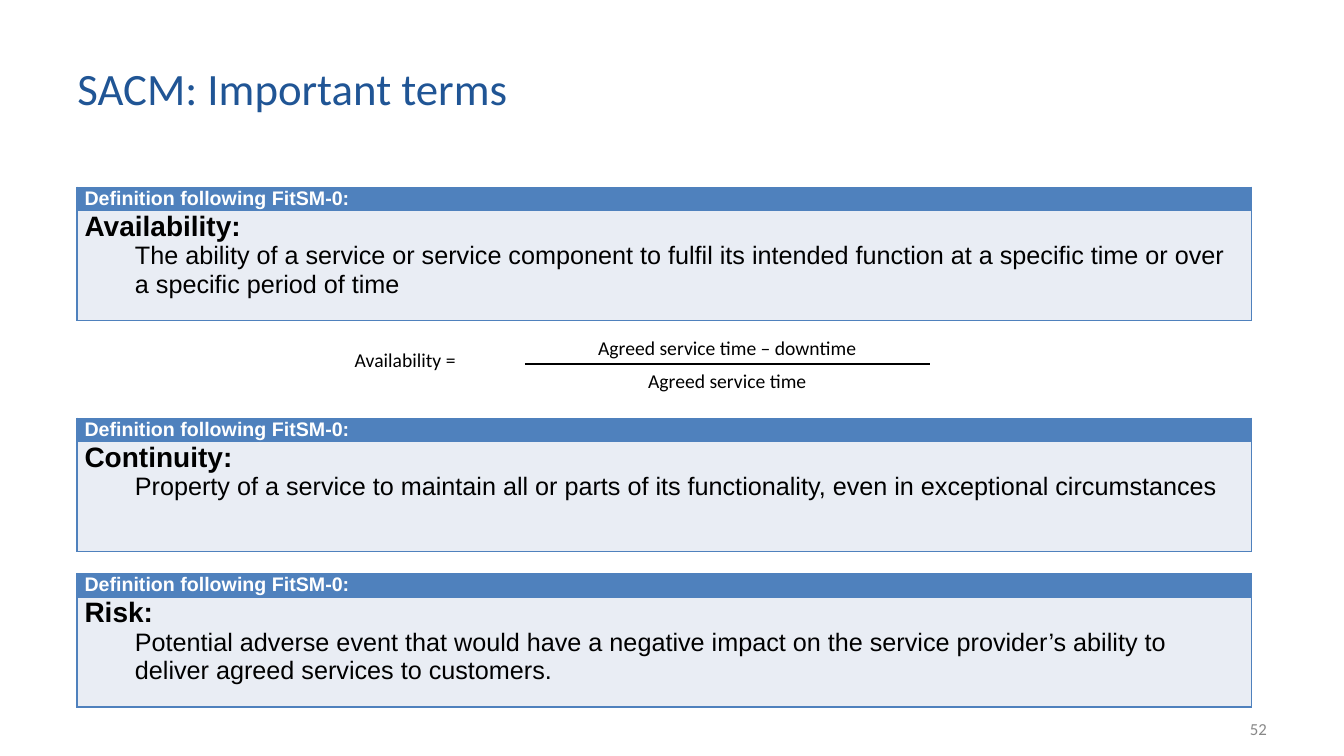
from lxml import etree
from pptx import Presentation
from pptx.dml.color import RGBColor
from pptx.enum.shapes import MSO_CONNECTOR
from pptx.enum.text import MSO_ANCHOR, PP_ALIGN
from pptx.oxml.ns import qn
from pptx.util import Cm, Pt

LEFT, CENTER, RIGHT = PP_ALIGN.LEFT, PP_ALIGN.CENTER, PP_ALIGN.RIGHT
TOP, MIDDLE = MSO_ANCHOR.TOP, MSO_ANCHOR.MIDDLE
STRAIGHT = MSO_CONNECTOR.STRAIGHT

TITLE_BLUE = RGBColor(0x20, 0x55, 0x95)
HEADER_BLUE = RGBColor(0x4F, 0x81, 0xBD)
BODY_TINT = RGBColor(0xE9, 0xED, 0xF4)
GREY = RGBColor(0x88, 0x88, 0x88)
WHITE = RGBColor(0xFF, 0xFF, 0xFF)
BLACK = RGBColor(0, 0, 0)

TITLE = {"name": "Calibri", "size": Pt(32)}
FORMULA = {"name": "Calibri", "size": Pt(14)}
PAGE_NUMBER = {"name": "Calibri", "size": Pt(12)}
HEADING = {"name": "Arial", "size": Pt(14), "bold": True}
TERM = {"name": "Arial", "size": Pt(20), "bold": True}
MEANING = {"name": "Arial", "size": Pt(18), "bold": False}

# Top edge in cm, term, meaning
DEFINITIONS = [
    (4.72, "Availability:",
     "The ability of a service or service component to fulfil its intended "
     "function at a specific time or over a specific period of time"),
    (10.54, "Continuity:",
     "Property of a service to maintain all or parts of its functionality, "
     "even in exceptional circumstances"),
    (14.45, "Risk:",
     "Potential adverse event that would have a negative impact on the "
     "service provider’s ability to deliver agreed services to customers."),
]


def write(paragraph, text, style, color):
    run = paragraph.add_run()
    run.text = text
    for attribute, value in style.items():
        setattr(run.font, attribute, value)
    run.font.color.rgb = color


def add_label(slide, box, text, style, color, align=LEFT, anchor=TOP):
    frame = slide.shapes.add_textbox(*map(Cm, box)).text_frame
    frame.word_wrap = True
    frame.vertical_anchor = anchor
    frame.paragraphs[0].alignment = align
    write(frame.paragraphs[0], text, style, color)


def format_cell(cell, fill):
    cell.margin_left = cell.margin_right = Cm(0.19)
    cell.margin_top = cell.margin_bottom = 0
    properties = cell._tc.get_or_add_tcPr()
    for side in ("a:lnL", "a:lnR", "a:lnT", "a:lnB"):
        border = etree.SubElement(properties, qn(side), w=str(Pt(1)))
        solid = etree.SubElement(border, qn("a:solidFill"))
        etree.SubElement(solid, qn("a:srgbClr"), val=str(HEADER_BLUE))
    cell.fill.solid()
    cell.fill.fore_color.rgb = fill


def add_definition(slide, top, term, meaning):
    frame = slide.shapes.add_table(2, 1, Cm(1.94), Cm(top), Cm(29.6), Cm(3.3))
    table = frame.table
    table.first_row = table.horz_banding = False
    table.rows[0].height, table.rows[1].height = Cm(0.54), Cm(2.77)
    heading, body = table.cell(0, 0), table.cell(1, 0)
    format_cell(heading, HEADER_BLUE)
    format_cell(body, BODY_TINT)

    write(heading.text_frame.paragraphs[0], "Definition following FitSM-0:",
          HEADING, WHITE)
    write(body.text_frame.paragraphs[0], term, TERM, BLACK)
    explanation = body.text_frame.add_paragraph()
    explanation.level = 1
    indent = explanation._p.get_or_add_pPr()
    indent.set("marL", str(Cm(1.27)))
    indent.set("indent", "0")
    write(explanation, meaning, MEANING, BLACK)


def add_fraction_bar(slide, left, right, y):
    bar = slide.shapes.add_connector(STRAIGHT, Cm(left), Cm(y), Cm(right), Cm(y))
    bar.line.color.rgb = BLACK
    bar.line.width = Pt(1.5)
    etree.SubElement(bar._element.spPr, qn("a:effectLst"))


def main():
    deck = Presentation()
    deck.slide_width, deck.slide_height = Cm(33.87), Cm(19.05)
    slide = deck.slides.add_slide(deck.slide_layouts[6])

    # Title and page number
    add_label(slide, (1.7, 0.76, 25.17, 2.92), "SACM: Important terms",
              TITLE, TITLE_BLUE, anchor=MIDDLE)
    add_label(slide, (24.28, 17.86, 7.9, 1.01), "52",
              PAGE_NUMBER, GREY, RIGHT, MIDDLE)

    # Definition boxes
    for top, term, meaning in DEFINITIONS:
        add_definition(slide, top, term, meaning)

    # Availability formula
    add_label(slide, (8.69, 8.64, 4.83, 0.86), "Availability =", FORMULA, BLACK)
    add_label(slide, (13.23, 8.33, 10.2, 0.86),
              "Agreed service time – downtime", FORMULA, BLACK, CENTER)
    add_label(slide, (13.23, 9.17, 10.2, 0.86),
              "Agreed service time", FORMULA, BLACK, CENTER)
    add_fraction_bar(slide, 13.23, 23.43, 9.17)

    deck.save("out.pptx")


if __name__ == "__main__":
    main()
